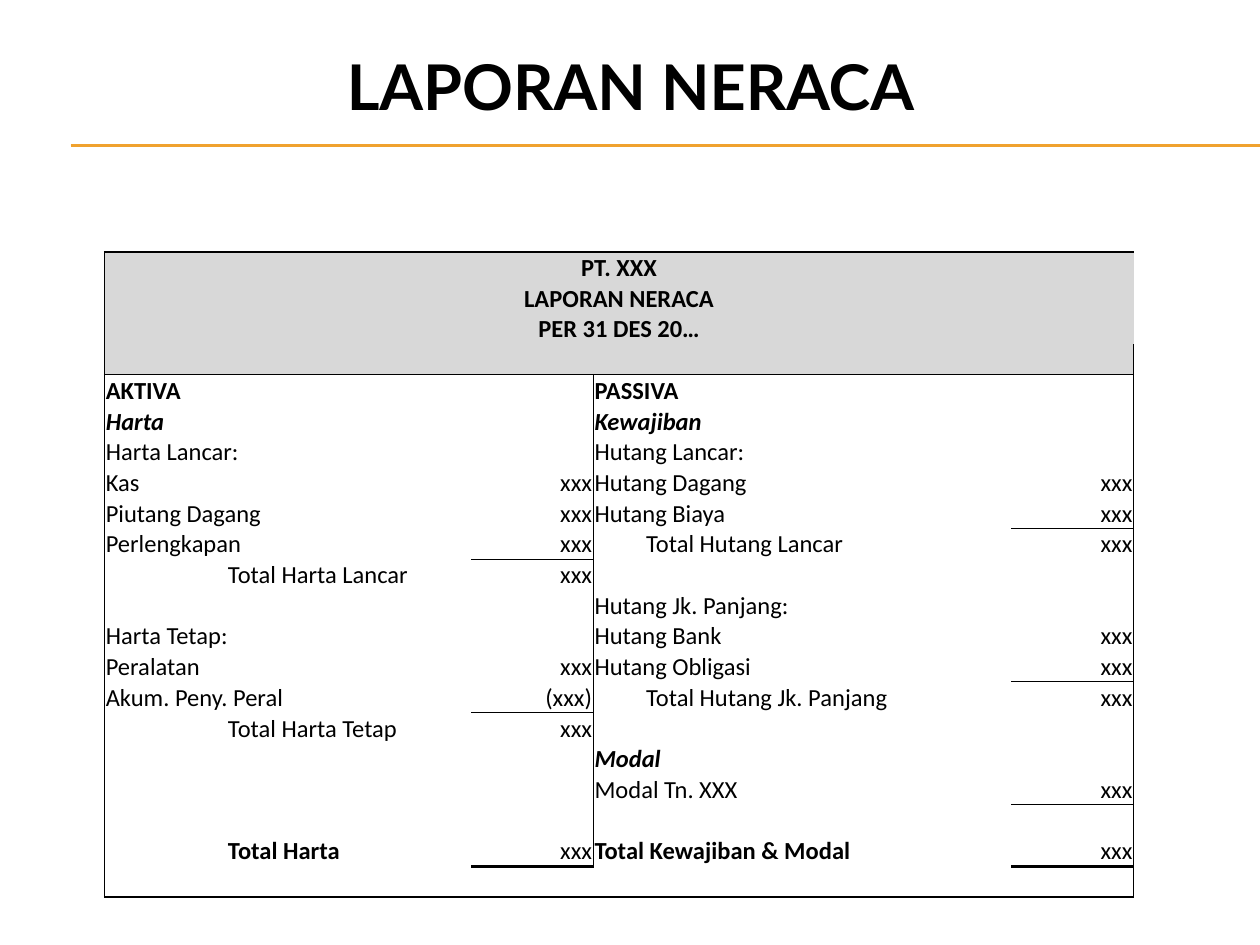
from pptx import Presentation
from pptx import util as u
from pptx.dml.color import RGBColor
from pptx.enum import shapes, text
from pptx.oxml.ns import qn
from lxml import etree

Inches, Pt = u.Inches, u.Pt
BLACK = RGBColor(0x00, 0x00, 0x00)
GRAY = RGBColor(0xD8, 0xD8, 0xD8)
GOLD = RGBColor(0xF0, 0xA2, 0x2E)

COLUMNS, ROWS = 9, 21
WIDE, NARROW = 0.97, 0.41
LEFT_AMOUNT, RIGHT_START, RIGHT_AMOUNT = 3, 4, 8
HEADING = ["PT. XXX", "LAPORAN NERACA", "PER 31 DES 20…"]
HEADING_ROWS = 4

# Each entry: row, label, first column, columns spanned, style, amount
# Style letters: b = bold, i = italic
ASSETS = [
    (4, "AKTIVA", 0, 1, "b", ""),
    (5, "Harta", 0, 1, "bi", ""),
    (6, "Harta Lancar:", 0, 2, "", ""),
    (7, "Kas", 0, 1, "", "xxx"),
    (8, "Piutang Dagang", 0, 2, "", "xxx"),
    (9, "Perlengkapan", 0, 2, "", "xxx"),
    (10, "Total Harta Lancar", 1, 2, "", "xxx"),
    (12, "Harta Tetap:", 0, 2, "", ""),
    (13, "Peralatan", 0, 1, "", "xxx"),
    (14, "Akum. Peny. Peral", 0, 2, "", "(xxx)"),
    (15, "Total Harta Tetap", 1, 2, "", "xxx"),
    (19, "Total Harta", 1, 2, "b", "xxx"),
]
LIABILITIES = [
    (4, "PASSIVA", 4, 2, "b", ""),
    (5, "Kewajiban", 4, 2, "bi", ""),
    (6, "Hutang Lancar:", 4, 3, "", ""),
    (7, "Hutang Dagang", 4, 3, "", "xxx"),
    (8, "Hutang Biaya", 4, 2, "", "xxx"),
    (9, "Total Hutang Lancar", 5, 2, "", "xxx"),
    (11, "Hutang Jk. Panjang:", 4, 3, "", ""),
    (12, "Hutang Bank", 4, 2, "", "xxx"),
    (13, "Hutang Obligasi", 4, 3, "", "xxx"),
    (14, "Total Hutang Jk. Panjang", 5, 3, "", "xxx"),
    (16, "Modal", 4, 2, "bi", ""),
    (17, "Modal Tn. XXX", 4, 3, "", "xxx"),
    (19, "Total Kewajiban & Modal", 4, 4, "b", "xxx"),
]
# Rules under amounts: (row, column) to width in points
SUM_RULES = {(9, LEFT_AMOUNT): 0.5, (14, LEFT_AMOUNT): 0.5, (19, LEFT_AMOUNT): 2,
             (8, RIGHT_AMOUNT): 0.5, (13, RIGHT_AMOUNT): 0.5,
             (17, RIGHT_AMOUNT): 0.5, (19, RIGHT_AMOUNT): 2}


def add_title(page, left, top, width, height):
    box = page.shapes.add_textbox(left, top, width, height)
    box.text_frame.word_wrap = True
    para = box.text_frame.paragraphs[0]
    para.text = "LAPORAN NERACA"
    para.alignment = text.PP_ALIGN.CENTER
    para.font.name, para.font.size, para.font.bold = "Lato", Pt(36), True
    para.font.color.rgb = BLACK


def add_rule(page, left, right, top):
    line = page.shapes.add_connector(shapes.MSO_CONNECTOR.STRAIGHT, left, top, right, top)
    line.line.color.rgb = GOLD
    line.line.width = Pt(0.75)
    etree.SubElement(line._element.spPr, qn("a:effectLst"))


def write_cell(cell, words="", align=text.PP_ALIGN.LEFT, style=""):
    para = cell.text_frame.paragraphs[0]
    para.text = words
    para.alignment = align
    font = para.font
    font.name, font.size, font.color.rgb = "Calibri", Pt(14), BLACK
    font.bold, font.italic = "b" in style, "i" in style
    if not words:
        # An empty cell takes its line height from the end mark
        etree.SubElement(para._p, qn("a:endParaRPr"), sz="1400")


def cell_borders(row, column):
    """Widths of the left, right, top and bottom borders of one cell."""
    body = row >= HEADING_ROWS
    # The divider stops above the closing row
    divided = body and row < ROWS - 1
    left = 1 if column == 0 else 0.5 if divided and column == RIGHT_START else 0
    right = 1 if column == RIGHT_AMOUNT else 0.5 if divided and column == LEFT_AMOUNT else 0
    top = 1 if row == 0 else 0.5 if row == HEADING_ROWS else SUM_RULES.get((row - 1, column), 0)
    bottom = (1 if row == ROWS - 1 else 0.5 if row == HEADING_ROWS - 1
              else SUM_RULES.get((row, column), 0))
    return {"a:lnL": left, "a:lnR": right, "a:lnT": top, "a:lnB": bottom}


def draw_borders(cell, widths):
    properties = cell._tc.get_or_add_tcPr()
    for position, (tag, width) in enumerate(widths.items()):
        line = etree.Element(qn(tag), w=str(int(Pt(width))))
        if width:
            fill = etree.SubElement(line, qn("a:solidFill"))
            etree.SubElement(fill, qn("a:srgbClr"), val=str(BLACK))
        else:
            etree.SubElement(line, qn("a:noFill"))
        properties.insert(position, line)


def add_balance_sheet(page, left, top, width, height):
    table = page.shapes.add_table(ROWS, COLUMNS, left, top, width, height).table
    table.first_row = table.horz_banding = False
    for index, column in enumerate(table.columns):
        column.width = Inches(NARROW if index == RIGHT_START else WIDE)

    # Plain cells with fills and borders
    for row in range(ROWS):
        for column in range(COLUMNS):
            cell = table.cell(row, column)
            cell.margin_left = cell.margin_right = cell.margin_top = Inches(0.01)
            cell.margin_bottom = 0
            cell.vertical_anchor = text.MSO_ANCHOR.BOTTOM
            if row < HEADING_ROWS:
                cell.fill.solid()
                cell.fill.fore_color.rgb = GRAY
            else:
                cell.fill.background()
            draw_borders(cell, cell_borders(row, column))

    # Heading, then both sides of the balance
    entries = [(row, 0, COLUMNS, words, text.PP_ALIGN.CENTER, "b")
               for row, words in enumerate(HEADING)]
    for side, amount_column in ((ASSETS, LEFT_AMOUNT), (LIABILITIES, RIGHT_AMOUNT)):
        for row, label, first, span, style, amount in side:
            entries.append((row, first, span, label, text.PP_ALIGN.LEFT, style))
            if amount:
                entries.append((row, amount_column, 1, amount, text.PP_ALIGN.RIGHT, ""))
    filled = {(row, first): (words, align, style)
              for row, first, span, words, align, style in entries}
    for row, first, span, *_ in entries:
        if span > 1:
            table.cell(row, first).merge(table.cell(row, first + span - 1))
    for row in range(ROWS):
        for column in range(COLUMNS):
            write_cell(table.cell(row, column), *filled.get((row, column), ()))


def main():
    deck = Presentation()
    deck.slide_width, deck.slide_height = Inches(10), Inches(7.5)
    page = deck.slides.add_slide(deck.slide_layouts[6])
    for top in (1.15, 1.16):
        add_rule(page, Inches(0.56), Inches(10), Inches(top))
    add_title(page, Inches(2.42), Inches(0.33), Inches(5.17), Inches(0.71))
    add_balance_sheet(page, Inches(0.83), Inches(2), Inches(8.17), Inches(5.12))
    deck.save("out.pptx")


if __name__ == "__main__":
    main()
